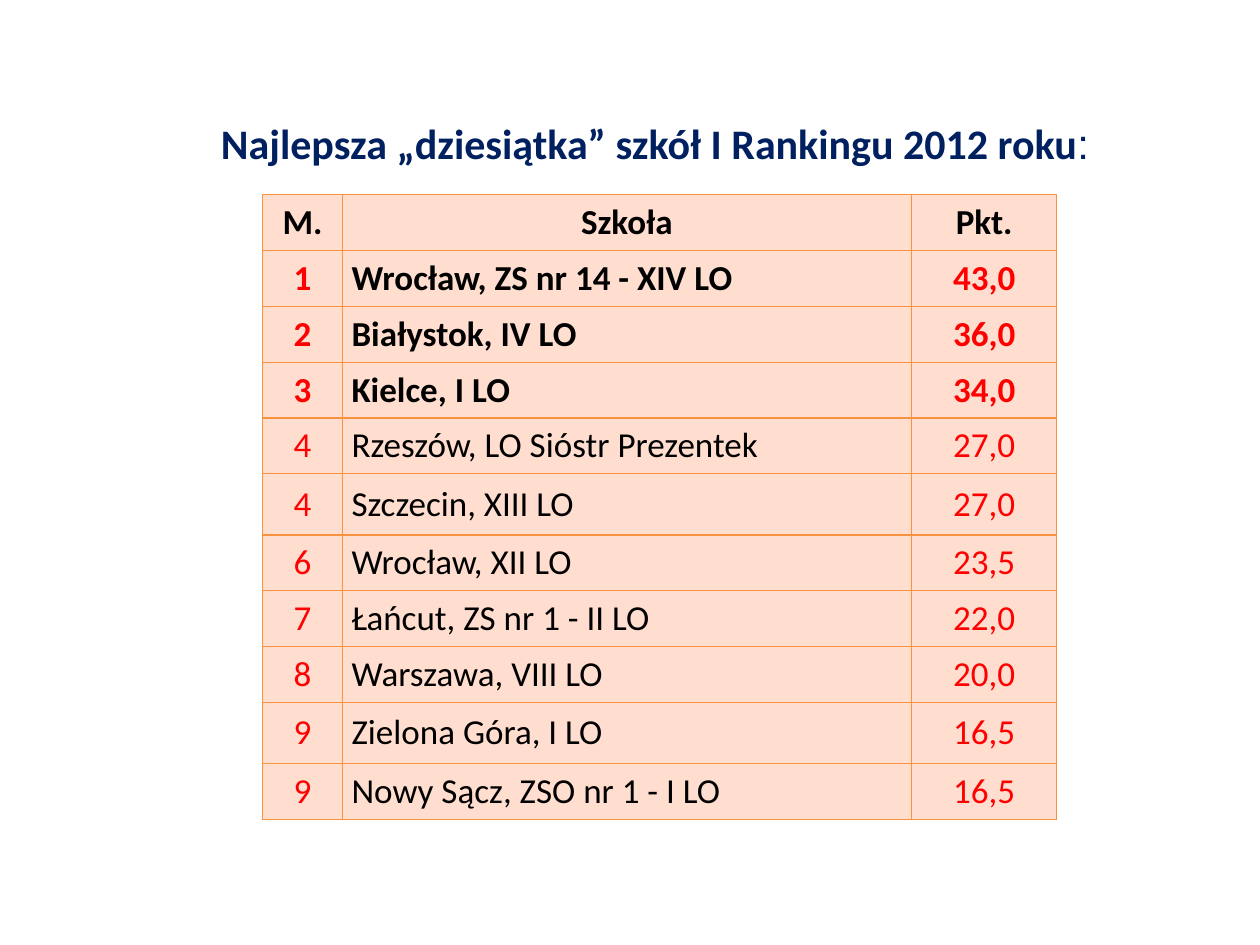
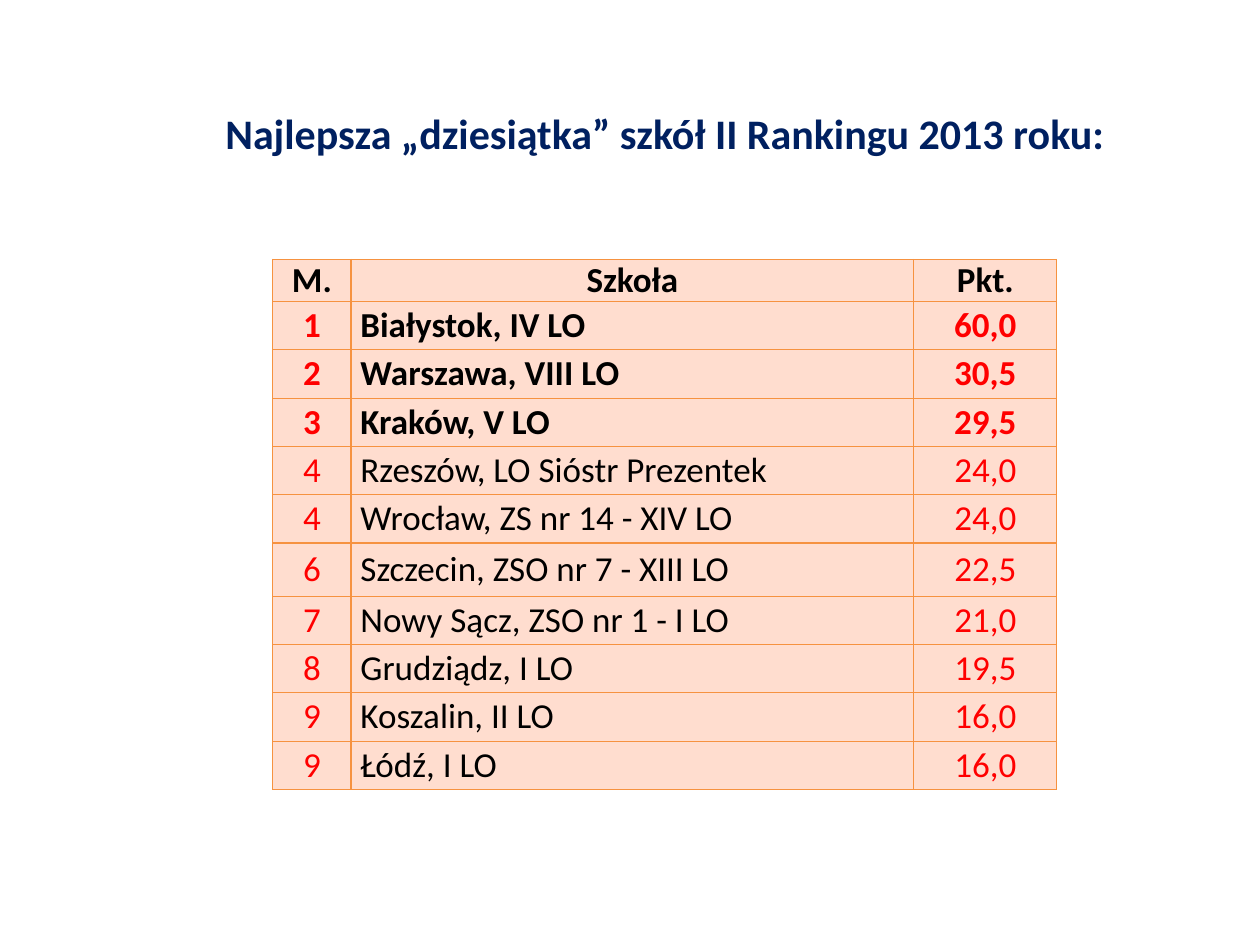
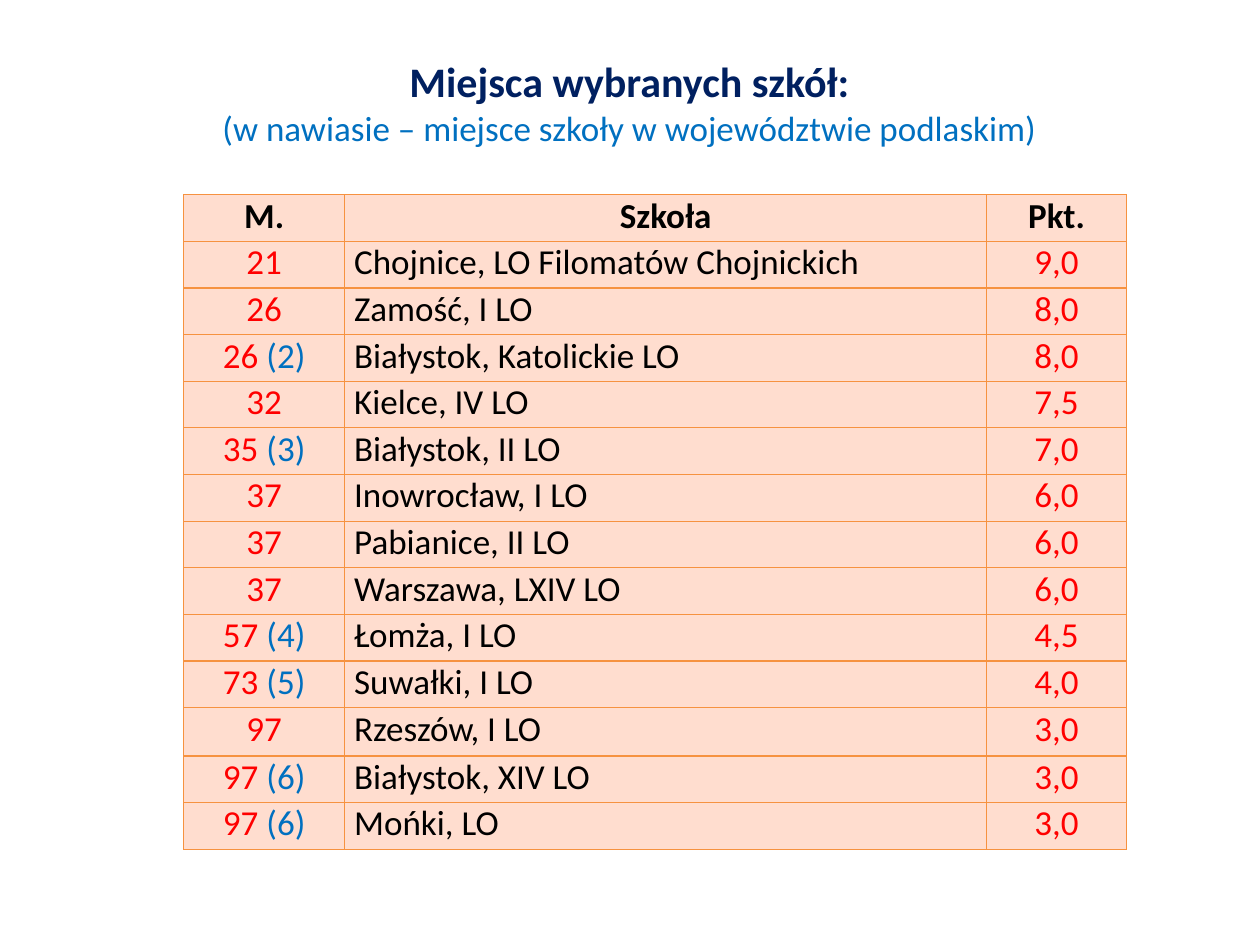
from lxml import etree
from pptx import Presentation
from pptx.dml.color import RGBColor
from pptx.enum.text import MSO_ANCHOR, PP_ALIGN
from pptx.oxml.ns import qn
from pptx.util import Pt

CENTER, LEFT = PP_ALIGN.CENTER, PP_ALIGN.LEFT
TOP, MIDDLE = MSO_ANCHOR.TOP, MSO_ANCHOR.MIDDLE
COLORS = {
    "title": "002060",
    "region": "0070C0",
    "score": "FF0000",
    "school": "000000",
    "cell": "FFDDCF",
    "border": "F69240",
}
TITLE_SIZE, BODY_SIZE = 24, 20
BORDER_WIDTH, CELL_MARGIN = 0.75, 5.4
HEADINGS = ("M.", "Szkoła", "Pkt.")

RANKING_2012 = [
    ("1", "Wrocław, ZS nr 14 - XIV LO", "43,0"),
    ("2", "Białystok, IV LO", "36,0"),
    ("3", "Kielce, I LO", "34,0"),
    ("4", "Rzeszów, LO Sióstr Prezentek", "27,0"),
    ("4", "Szczecin, XIII LO", "27,0"),
    ("6", "Wrocław, XII LO", "23,5"),
    ("7", "Łańcut, ZS nr 1 - II LO", "22,0"),
    ("8", "Warszawa, VIII LO", "20,0"),
    ("9", "Zielona Góra, I LO", "16,5"),
    ("9", "Nowy Sącz, ZSO nr 1 - I LO", "16,5"),
]
RANKING_2013 = [
    ("1", "Białystok, IV LO", "60,0"),
    ("2", "Warszawa, VIII LO", "30,5"),
    ("3", "Kraków, V LO", "29,5"),
    ("4", "Rzeszów, LO Sióstr Prezentek", "24,0"),
    ("4", "Wrocław, ZS nr 14 - XIV LO", "24,0"),
    ("6", "Szczecin, ZSO nr 7 - XIII LO", "22,5"),
    ("7", "Nowy Sącz, ZSO nr 1 - I LO", "21,0"),
    ("8", "Grudziądz, I LO", "19,5"),
    ("9", "Koszalin, II LO", "16,0"),
    ("9", "Łódź, I LO", "16,0"),
]
SELECTED_SCHOOLS = [
    ("21", "Chojnice, LO Filomatów Chojnickich", "9,0"),
    ("26", "Zamość, I LO", "8,0"),
    ("26 (2)", "Białystok, Katolickie LO", "8,0"),
    ("32", "Kielce, IV LO", "7,5"),
    ("35 (3)", "Białystok, II LO", "7,0"),
    ("37", "Inowrocław, I LO", "6,0"),
    ("37", "Pabianice, II LO", "6,0"),
    ("37", "Warszawa, LXIV LO", "6,0"),
    ("57 (4)", "Łomża, I LO", "4,5"),
    ("73 (5)", "Suwałki, I LO", "4,0"),
    ("97", "Rzeszów, I LO", "3,0"),
    ("97 (6)", "Białystok, XIV LO", "3,0"),
    ("97 (6)", "Mońki, LO", "3,0"),
]


def add_text(paragraph, text, *, color, size=BODY_SIZE, bold=False,
             font="Calibri", align=CENTER):
    paragraph.alignment = align
    run = paragraph.add_run()
    run.text = text
    run.font.name = font
    run.font.size = Pt(size)
    run.font.bold = bold
    run.font.color.rgb = RGBColor.from_string(COLORS[color])


def add_title(slide, box, title, anchor=MIDDLE):
    """Add the title box and return its text frame."""
    frame = slide.shapes.add_textbox(*map(Pt, box)).text_frame
    frame.word_wrap = True
    frame.vertical_anchor = anchor
    add_text(frame.paragraphs[0], title, color="title", size=TITLE_SIZE, bold=True)
    return frame


def style_cell(cell, anchor):
    cell.vertical_anchor = anchor
    cell.margin_left = cell.margin_right = Pt(CELL_MARGIN)
    cell.margin_top = cell.margin_bottom = 0
    properties = cell._tc.get_or_add_tcPr()
    for side in ("a:lnL", "a:lnR", "a:lnT", "a:lnB"):
        line = etree.SubElement(properties, qn(side), w=str(Pt(BORDER_WIDTH)))
        fill = etree.SubElement(line, qn("a:solidFill"))
        etree.SubElement(fill, qn("a:srgbClr"), val=COLORS["border"])
    cell.fill.solid()
    cell.fill.fore_color.rgb = RGBColor.from_string(COLORS["cell"])


def add_ranking(slide, left, top, widths, schools, row_height, *,
                special_heights=None, podium=0, anchor=MIDDLE):
    """Add a ranking table; its first `podium` schools are bold."""
    special_heights = special_heights or {}
    rows = [HEADINGS, *schools]
    heights = [special_heights.get(i, row_height) for i in range(len(rows))]
    box = (left, top, sum(widths), sum(heights))
    table = slide.shapes.add_table(len(rows), len(widths), *map(Pt, box)).table
    table.first_row = table.horz_banding = False
    for column, width in zip(table.columns, widths):
        column.width = Pt(width)
    for i, (values, height) in enumerate(zip(rows, heights)):
        table.rows[i].height = Pt(height)
        for j, value in enumerate(values):
            cell = table.cell(i, j)
            style_cell(cell, anchor)
            paragraph = cell.text_frame.paragraphs[0]
            paragraph.space_after = Pt(6)
            is_school = j == 1
            color = "school" if i == 0 or is_school else "score"
            align = LEFT if i and is_school else CENTER
            place, bracket, region_place = value.partition("(")
            add_text(paragraph, place, color=color, bold=i <= podium, align=align)
            if bracket:
                add_text(paragraph, bracket + region_place, color="region")


def build_2012(slide):
    add_ranking(slide, 150.2, 111.3, (45.3, 325.5, 82.9), RANKING_2012, 31.9,
                special_heights={5: 35, 9: 35}, podium=3)
    title = add_title(slide, (105, 63.4, 538.6, 36),
                      "Najlepsza „dziesiątka” szkół I Rankingu 2012 roku")
    add_text(title.paragraphs[0], ":", color="title", size=TITLE_SIZE, font="Arial")


def build_2013(slide):
    add_ranking(slide, 155.9, 148.3, (44.7, 321.6, 81.8), RANKING_2013, 27.6,
                special_heights={0: 24, 6: 30.5}, podium=3)
    add_title(slide, (105, 57.6, 550, 36),
              "Najlepsza „dziesiątka” szkół II Rankingu 2013 roku:")


def build_selected(slide):
    title = add_title(slide, (31, 28.3, 657.4, 90), "Miejsca wybranych szkół:", TOP)
    add_text(title.add_paragraph(),
             "(w nawiasie – miejsce szkoły w województwie podlaskim)", color="region")
    add_ranking(slide, 105, 111.3, (92, 367, 79.6), SELECTED_SCHOOLS, 26.65,
                special_heights={11: 27.6}, anchor=TOP)


def main():
    deck = Presentation()
    deck.slide_width, deck.slide_height = Pt(720), Pt(540)
    blank = deck.slide_layouts[6]
    for build in (build_2012, build_2013, build_selected):
        build(deck.slides.add_slide(blank))
    deck.save("out.pptx")


if __name__ == "__main__":
    main()
